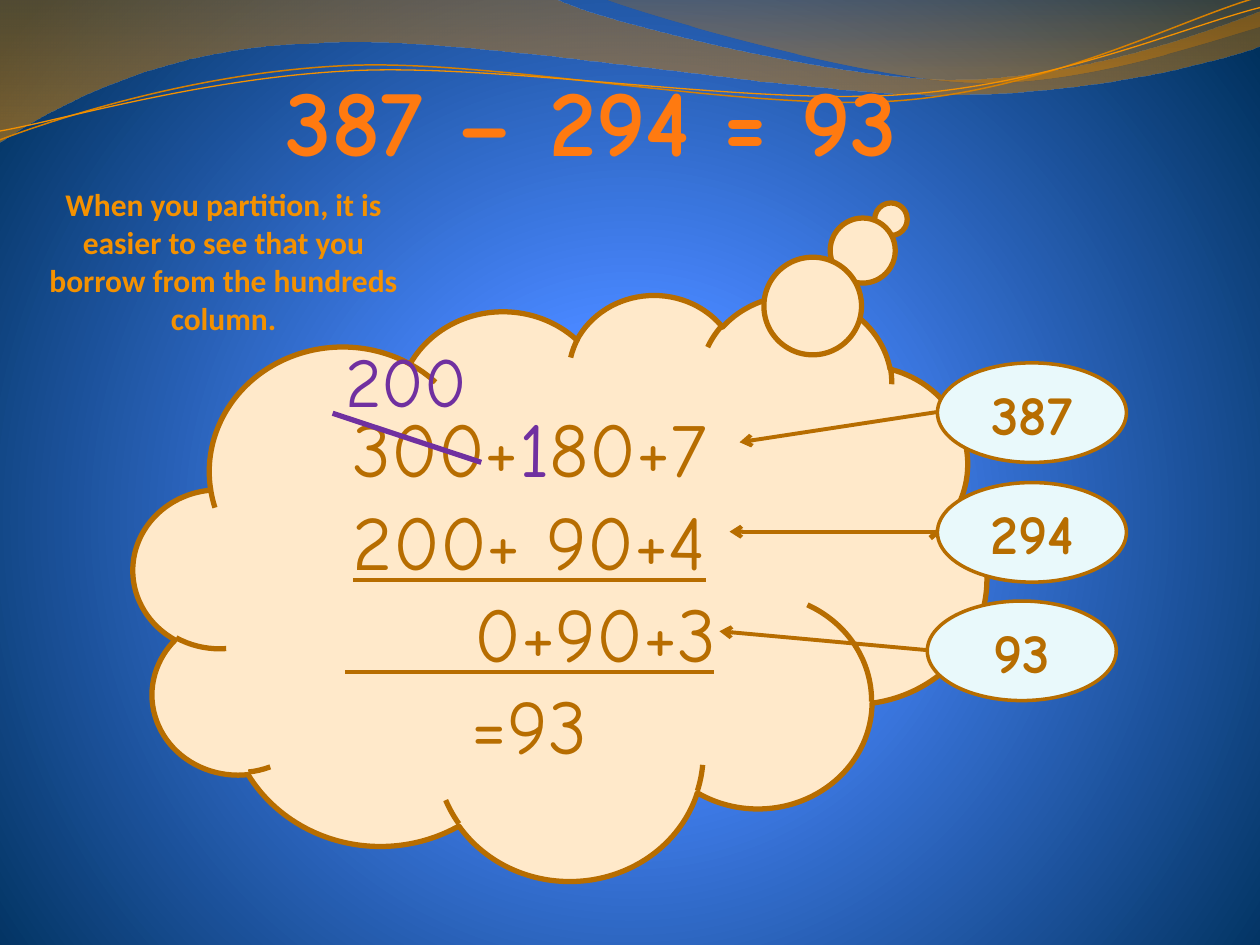
from pptx import Presentation
from pptx.dml.color import RGBColor
from pptx.enum.shapes import MSO_CONNECTOR as Connector, MSO_SHAPE as Shape
from pptx.enum.text import MSO_ANCHOR as Anchor, MSO_AUTO_SIZE as AutoSize, PP_ALIGN as Align
from pptx.oxml import parse_xml
from pptx.oxml.ns import nsdecls, qn
from pptx.util import Inches, Pt

COLORS = {
    "brown": "B76D00", "purple": "7030A0", "cream": "FFE9CA", "ice": "E9F9FB",
    "amber": "F49100", "ochre": "D78000", "orange": "FF7A10",
    "sky": "538CFF", "blue": "4987FF", "navy": "00315D",
    "shade": "B56B00", "gold": "DD8400",
}
HAND = "Comic Neue"


def rgb(name):
    return RGBColor.from_string(COLORS[name])


def gradient_xml(stops, direction):
    """Stops are (position %, colour, opacity %)."""
    marks = "".join(
        f'<a:gs pos="{position * 1000}"><a:srgbClr val="{COLORS[color]}">'
        f'<a:alpha val="{opacity * 1000}"/></a:srgbClr></a:gs>'
        for position, color, opacity in stops)
    return parse_xml(f'<a:gradFill {nsdecls("a")} rotWithShape="1">'
                     f'<a:gsLst>{marks}</a:gsLst>{direction}</a:gradFill>')


def set_gradient(fill, holder, stops, direction):
    fill.gradient()
    old = holder.find(qn("a:gradFill"))
    holder.replace(old, gradient_xml(stops, direction))


def paint_background(page):
    fill = page.background.fill
    holder = page._element.cSld.find(qn("p:bg")).find(qn("p:bgPr"))
    set_gradient(fill, holder, [(0, "sky", 100), (25, "blue", 100), (100, "navy", 100)],
                 '<a:path path="circle"><a:fillToRect l="10000" t="110000" '
                 'r="10000" b="100000"/></a:path>')


def add_wave(page, start, segments, closed):
    """Segments hold 2 numbers for a line, 6 for a Bezier curve."""
    points = [tuple(map(Inches, segment[i:i + 2]))
              for segment in segments for i in range(0, len(segment), 2)]
    builder = page.shapes.build_freeform(*map(Inches, start))
    builder.add_line_segments(points, close=closed)
    wave = builder.convert_to_shape()
    wave.shadow.inherit = False
    # Join each three steps of a curve into one Bezier element
    steps = iter(list(wave._element.iter(qn("a:lnTo"))))
    for segment in segments:
        step = next(steps)
        if len(segment) == 6:
            curve = parse_xml(f'<a:cubicBezTo {nsdecls("a")}/>')
            step.addprevious(curve)
            for knot in (step, next(steps), next(steps)):
                curve.append(knot[0])
                knot.getparent().remove(knot)
    return wave


def add_band(page, start, segments, stops):
    band = add_wave(page, start, segments, True)
    set_gradient(band.fill, band._element.spPr, stops, '<a:lin ang="5400000" scaled="0"/>')
    band.line.fill.background()


def add_strand(page, start, segments, color, width):
    strand = add_wave(page, start, segments, False)
    strand.fill.background()
    strand.line.color.rgb = rgb(color)
    strand.line.width = Pt(width)


def add_outlined(page, kind, place, fill, width):
    shape = page.shapes.add_shape(kind, *map(Inches, place))
    shape.shadow.inherit = False
    shape.fill.solid()
    shape.fill.fore_color.rgb = rgb(fill)
    shape.line.color.rgb = rgb("brown")
    shape.line.width = Pt(width)
    shape.text_frame.vertical_anchor = Anchor.MIDDLE
    return shape


def style(para, size, color, font=HAND, bold=False, align=Align.CENTER):
    para.alignment = align
    para.font.name = font
    para.font.size = Pt(size)
    para.font.bold = bold
    para.font.color.rgb = rgb(color)


def add_text(page, place, text, wrap=True, **look):
    box = page.shapes.add_textbox(*map(Inches, place))
    box.text_frame.word_wrap = wrap
    box.text_frame.auto_size = AutoSize.SHAPE_TO_FIT_TEXT
    para = box.text_frame.paragraphs[0]
    para.text = text
    style(para, **look)


def add_line(page, start, end, color, width, arrow=False):
    line = page.shapes.add_connector(Connector.STRAIGHT, *map(Inches, start + end))
    line.line.color.rgb = rgb(color)
    line.line.width = Pt(width)
    if arrow:
        line.line._get_or_add_ln().append(
            parse_xml(f'<a:tailEnd {nsdecls("a")} type="arrow"/>'))
    line._element.spPr.append(parse_xml(f'<a:effectLst {nsdecls("a")}/>'))


def add_cloud(page):
    cloud = add_outlined(page, Shape.CLOUD_CALLOUT, (1.06, 2.33, 6.77, 4.65), "cream", 3)
    cloud.adjustments[0], cloud.adjustments[1] = 0.388, -0.627
    frame = cloud.text_frame
    frame.word_wrap = True
    frame.margin_top, frame.margin_bottom = Inches(0.2), 0
    rows = [["300+", "1", "80+7"], ["200+ 90+4"], ["0+90+3"], ["=93"]]
    for index, row in enumerate(rows):
        para = frame.add_paragraph() if index else frame.paragraphs[0]
        style(para, 44, "brown")
        for text in row:
            span = para.add_run()
            span.text = text
            if text == "1":
                span.font.color.rgb = rgb("purple")
    frame.paragraphs[1].font.underline = True
    # The difference sits under the tens and units
    frame.paragraphs[2]._p.get_or_add_pPr().set("marL", str(Inches(1.05)))
    add_line(page, (2.74, 5.33), (5.67, 5.33), "brown", 2.25)


def add_label(page, text, left, top, tip):
    label = add_outlined(page, Shape.OVAL, (left, top, 1.5, 0.79), "ice", 2)
    para = label.text_frame.paragraphs[0]
    para.text = text
    style(para, 32, "brown", bold=True)
    add_line(page, (left, top + 0.39), tip, "brown", 2.25, arrow=True)


def main():
    deck = Presentation()
    deck.slide_width, deck.slide_height = Inches(10), Inches(7.5)
    page = deck.slides.add_slide(deck.slide_layouts[6])
    paint_background(page)

    # Waves along the top
    add_band(page, (0, 0), [
        (4.4, -0.01), (4.76, 0.17, 6.64, 0.63, 7.58, 0.63), (8.53, 0.63, 9.58, 0.26, 10, 0.09),
        (10.01, 0.36), (9.83, 0.44, 8.7, 0.76, 7.46, 0.75), (6.22, 0.75, 3.82, 0.28, 2.57, 0.34),
        (1.29, 0.36, 0.46, 0.83, -0.01, 1.13)], [(0, "shade", 45), (100, "gold", 55)])
    add_band(page, (4.79, -0.01), [
        (5.09, 0.11, 6.82, 0.62, 7.69, 0.65), (8.56, 0.69, 9.61, 0.32, 10, 0.21),
        (10, 0)], [(0, "shade", 30), (80, "ochre", 45)])
    add_strand(page, (0, 1.11), [
        (0.48, 0.93, 1.58, 0.57, 2.77, 0.52), (3.95, 0.47, 5.93, 0.89, 7.13, 0.8),
        (8.33, 0.71, 9.38, 0.15, 9.98, -0.02)], "ochre", 0.85)
    add_strand(page, (0, 1.04), [
        (0.47, 0.96, 1.64, 0.61, 2.83, 0.56), (4.03, 0.51, 5.97, 0.84, 7.17, 0.75),
        (8.36, 0.67, 9.41, 0.21, 10, 0.06)], "amber", 0.75)

    # Partitioned sum and its labels
    add_cloud(page)
    add_label(page, "387", 7.44, 2.88, (5.87, 3.51))
    add_label(page, "294", 7.44, 3.83, (5.79, 4.22))
    add_label(page, "93", 7.36, 4.77, (5.71, 5.01))

    # Hint and title
    add_text(page, (0.16, 1.42, 3.23, 1.31),
             "When you partition, it is easier to see that you borrow from the hundreds column.",
             size=18, color="amber", font="Calibri", bold=True)
    add_text(page, (1.69, 0.44, 6.01, 1.01), "387 – 294 = 93", wrap=False,
             size=54, color="orange", bold=True)

    # Borrowed hundred
    add_line(page, (2.64, 3.28), (3.82, 3.67), "purple", 3)
    add_text(page, (2.64, 2.63, 1.5, 0.77), "200", size=40, color="purple", align=Align.LEFT)

    deck.save("out.pptx")


if __name__ == "__main__":
    main()
